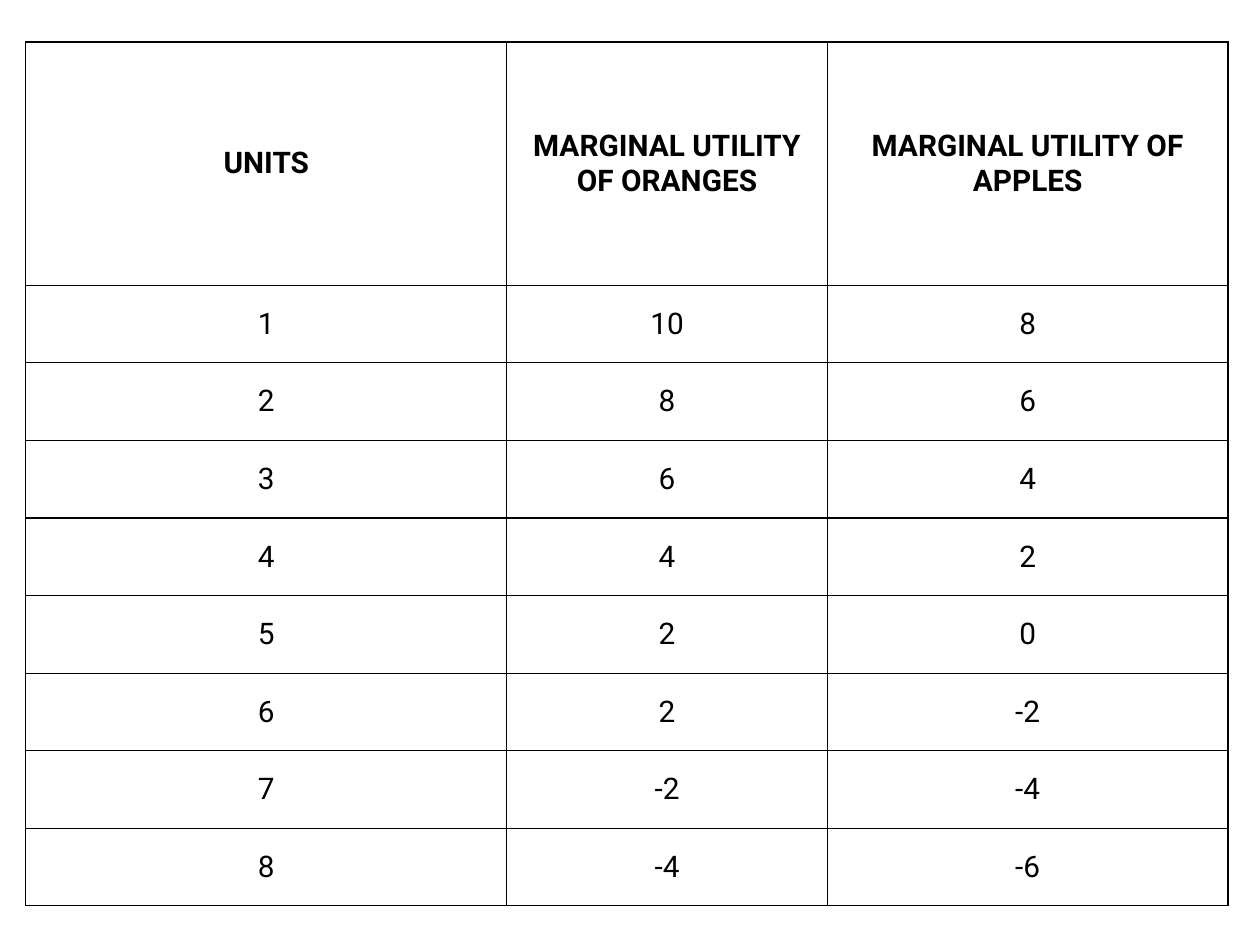
import dataclasses

import lxml.etree
import pptx
import pptx.dml.color
import pptx.enum.text
import pptx.oxml.ns
import pptx.table
import pptx.util

Pt = pptx.util.Pt

FONT = "Roboto"
BLACK = "000000"
WHITE = "FFFFFF"
BORDER_WIDTH = 0.75
COLUMN_WIDTHS = (274.8, 183.2, 229)
HEADER_HEIGHT = 139
ROW_HEIGHT = 44.35
TABLE_LEFT, TABLE_TOP = 14.8, 24


@dataclasses.dataclass(frozen=True)
class UtilityRow:
    units: str
    oranges: str
    apples: str
    height: float = ROW_HEIGHT
    bold: bool = False


ROWS = (
    UtilityRow(
        "UNITS",
        "MARGINAL UTILITY OF ORANGES",
        "MARGINAL UTILITY OF APPLES",
        HEADER_HEIGHT,
        True,
    ),
    UtilityRow("1", "10", "8"),
    UtilityRow("2", "8", "6"),
    UtilityRow("3", "6", "4"),
    UtilityRow("4", "4", "2"),
    UtilityRow("5", "2", "0"),
    UtilityRow("6", "2", "-2"),
    UtilityRow("7", "-2", "-4"),
    UtilityRow("8", "-4", "-6"),
)


def color(value: str) -> pptx.dml.color.RGBColor:
    return pptx.dml.color.RGBColor.from_string(value)


def add_borders(cell: pptx.table._Cell) -> None:
    name = pptx.oxml.ns.qn
    properties = cell._tc.get_or_add_tcPr()
    for side in ("a:lnL", "a:lnR", "a:lnT", "a:lnB"):
        line = lxml.etree.SubElement(
            properties, name(side), w=str(Pt(BORDER_WIDTH))
        )
        fill = lxml.etree.SubElement(line, name("a:solidFill"))
        lxml.etree.SubElement(fill, name("a:srgbClr"), val=BLACK)


def draw_cell(cell: pptx.table._Cell, text: str, bold: bool) -> None:
    add_borders(cell)
    cell.fill.solid()
    cell.fill.fore_color.rgb = color(WHITE)
    cell.vertical_anchor = pptx.enum.text.MSO_ANCHOR.MIDDLE
    cell.margin_left = cell.margin_right = Pt(6.75)
    cell.margin_top = cell.margin_bottom = Pt(3.6)
    para = cell.text_frame.paragraphs[0]
    para.alignment = pptx.enum.text.PP_ALIGN.CENTER
    span = para.add_run()
    span.text = text
    span.font.name = FONT
    span.font.size = Pt(17)
    span.font.bold = bold
    span.font.color.rgb = color(BLACK)


def draw_row(table: pptx.table.Table, index: int, row: UtilityRow) -> None:
    table.rows[index].height = Pt(row.height)
    texts = (row.units, row.oranges, row.apples)
    for column, text in enumerate(texts):
        draw_cell(table.cell(index, column), text, row.bold)


def main() -> None:
    deck = pptx.Presentation()
    deck.slide_width, deck.slide_height = Pt(720), Pt(540)
    page = deck.slides.add_slide(deck.slide_layouts[6])
    table = page.shapes.add_table(
        len(ROWS),
        len(COLUMN_WIDTHS),
        Pt(TABLE_LEFT),
        Pt(TABLE_TOP),
        Pt(sum(COLUMN_WIDTHS)),
        Pt(sum(row.height for row in ROWS)),
    ).table
    table.first_row = False
    table.horz_banding = False
    for column, width in zip(table.columns, COLUMN_WIDTHS):
        column.width = Pt(width)
    for index, row in enumerate(ROWS):
        draw_row(table, index, row)
    deck.save("out.pptx")


if __name__ == "__main__":
    main()
